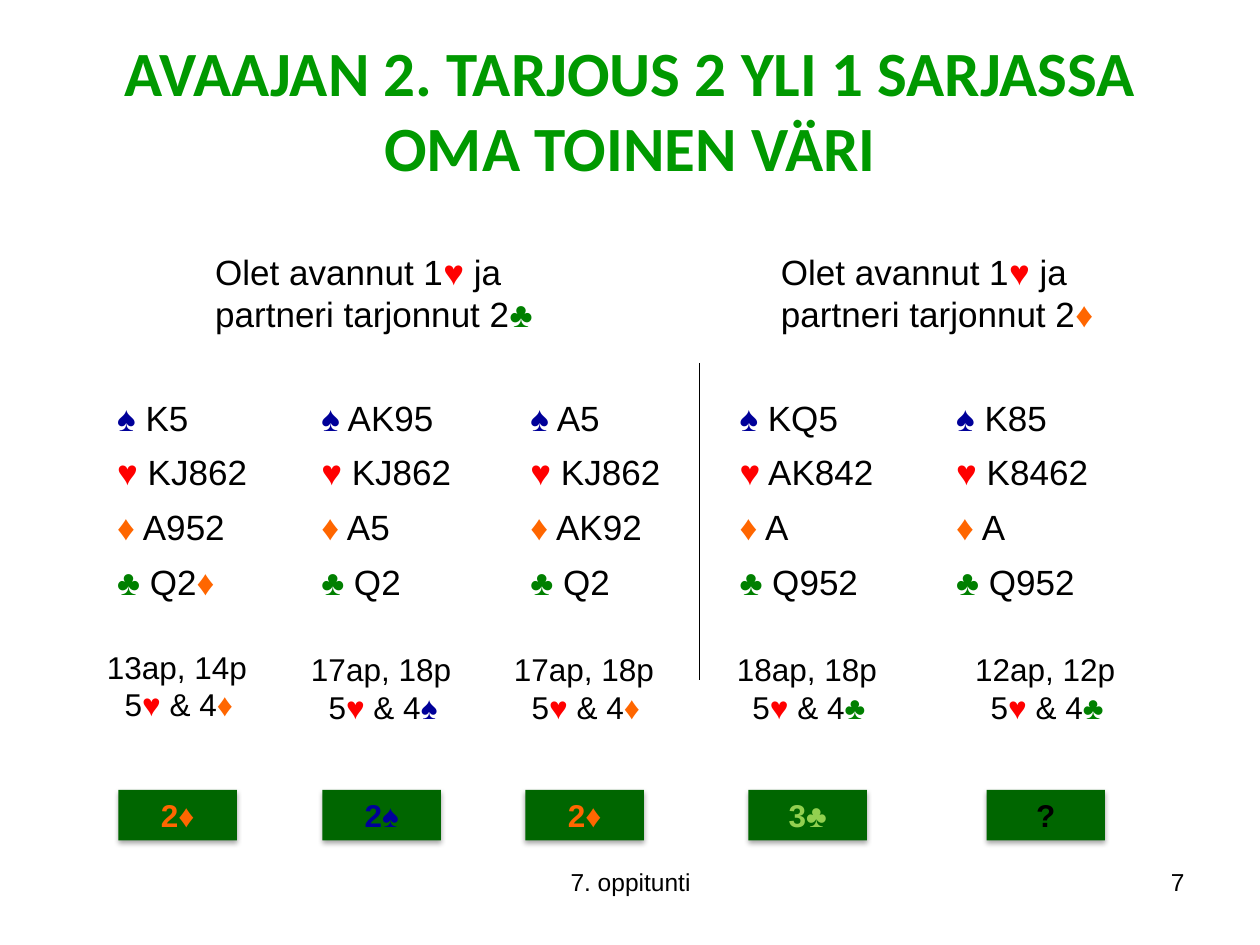
from lxml.etree import SubElement
from pptx import Presentation
from pptx.dml.color import RGBColor
from pptx.enum.shapes import MSO_CONNECTOR as CONNECTOR, MSO_SHAPE as SHAPE
from pptx.enum.text import MSO_ANCHOR as ANCHOR, PP_ALIGN as ALIGN
from pptx.oxml import parse_xml
from pptx.oxml.ns import nsdecls, qn
from pptx.util import Inches, Pt

SUITS = {"♠": "000099", "♥": "FF0000", "♦": "FF6600", "♣": "008000"}
SHADOW = (
    f'<a:effectLst {nsdecls("a")}><a:outerShdw blurRad="39400" dist="22900" dir="5400000" rotWithShape="0">'
    '<a:srgbClr val="000000"><a:alpha val="35000"/></a:srgbClr></a:outerShdw></a:effectLst>'
)


def color(value):
    return RGBColor.from_string(value)


def write(paragraph, text, size, align=ALIGN.LEFT):
    paragraph.alignment = align
    paragraph.font.name = "Arial"
    paragraph.font.size = Pt(size)
    paragraph.font.color.rgb = color("000000")
    pieces = text
    for mark in [*SUITS, "\n"]:
        pieces = pieces.replace(mark, f"|{mark}|")
    for piece in filter(None, pieces.split("|")):
        if piece == "\n":
            paragraph.add_line_break()
            continue
        run = paragraph.add_run()
        run.text = piece
        if piece in SUITS:
            run.font.color.rgb = color(SUITS[piece])


prs = Presentation()
prs.slide_width, prs.slide_height = Inches(10), Inches(7.5)
slide = prs.slides.add_slide(prs.slide_layouts[6])
shapes = slide.shapes

title = shapes.add_textbox(Inches(0.59), Inches(0.21), Inches(8.82), Inches(1.31)).text_frame
title.word_wrap = True
title.vertical_anchor = ANCHOR.MIDDLE
heading = title.paragraphs[0]
heading.text = "AVAAJAN 2. TARJOUS 2 YLI 1 SARJASSA\vOMA TOINEN VÄRI"
heading.alignment = ALIGN.CENTER
heading.font.name = "Calibri"
heading.font.size = Pt(36)
heading.font.bold = True
heading.font.color.rgb = color("009900")

holdings = [
    ["♠ K5", "♠ AK95", "♠ A5", "♠ KQ5", "♠ K85"],
    ["♥ KJ862", "♥ KJ862", "♥ KJ862", "♥ AK842", "♥ K8462"],
    ["♦ A952", "♦ A5", "♦ AK92", "♦ A", "♦ A"],
    ["♣ Q2♦", "♣ Q2", "♣ Q2", "♣ Q952", "♣ Q952"],
]
hands = shapes.add_table(4, 5, Inches(0.83), Inches(3.12), Inches(8.35), Inches(1.73)).table
hands.first_row = hands.horz_banding = False
for column, width in zip(hands.columns, [1.62, 1.66, 1.66, 1.72, 1.69]):
    column.width = Inches(width)
for row, cards in zip(hands.rows, holdings):
    row.height = Inches(0.43)
    for cell, holding in zip(row.cells, cards):
        cell.fill.background()
        write(cell.text_frame.paragraphs[0], holding, 20, ALIGN.JUSTIFY)

for left, response in [(1.61, "2♣"), (6.1, "2♦")]:
    auction = shapes.add_textbox(Inches(left), Inches(1.94), Inches(2.83), Inches(0.77)).text_frame
    auction.word_wrap = True
    write(auction.paragraphs[0], f"Olet avannut 1♥ ja \npartneri tarjonnut {response}", 20)

divider = shapes.add_connector(CONNECTOR.STRAIGHT, Inches(5.55), Inches(2.88), Inches(5.55), Inches(5.4))
divider.line.color.rgb = color("000000")
divider.line.width = Pt(0.75)
SubElement(divider._element.spPr, qn("a:effectLst"))

answers = [
    (0.94, 5.09, "13ap, 14p", "5♥ & 4♦", "2♦", "FF6600"),
    (2.56, 5.11, "17ap, 18p", "5♥ & 4♠", "2♠", "000099"),
    (4.17, 5.11, "17ap, 18p", "5♥ & 4♦", "2♦", "FF6600"),
    (5.94, 5.11, "18ap, 18p", "5♥ & 4♣", "3♣", "92D050"),
    (7.83, 5.11, "12ap, 12p", "5♥ & 4♣", "?", "000000"),
]
for left, top, points, lengths, bid, bid_color in answers:
    button = shapes.add_shape(SHAPE.RECTANGLE, Inches(left), Inches(6.27), Inches(0.94), Inches(0.4))
    button.fill.solid()
    button.fill.fore_color.rgb = color("006600")
    button.line.fill.background()
    button._element.spPr.append(parse_xml(SHADOW))
    label = button.text_frame.paragraphs[0]
    label.text = bid
    label.alignment = ALIGN.CENTER
    label.font.name = "Arial"
    label.font.size = Pt(18)
    label.font.bold = True
    label.font.color.rgb = color(bid_color)

    strength = shapes.add_textbox(Inches(left - 0.19), Inches(top), Inches(1.34), Inches(0.71)).text_frame
    strength.word_wrap = True
    write(strength.paragraphs[0], points, 18)
    write(strength.add_paragraph(), lengths, 18, ALIGN.CENTER)

for left, width, text, align in [(3.42, 3.17, "7. oppitunti", ALIGN.CENTER), (7.17, 2.33, "7", ALIGN.RIGHT)]:
    footer = shapes.add_textbox(Inches(left), Inches(6.83), Inches(width), Inches(0.52)).text_frame
    footer.word_wrap = True
    write(footer.paragraphs[0], text, 14, align)

prs.save("out.pptx")
